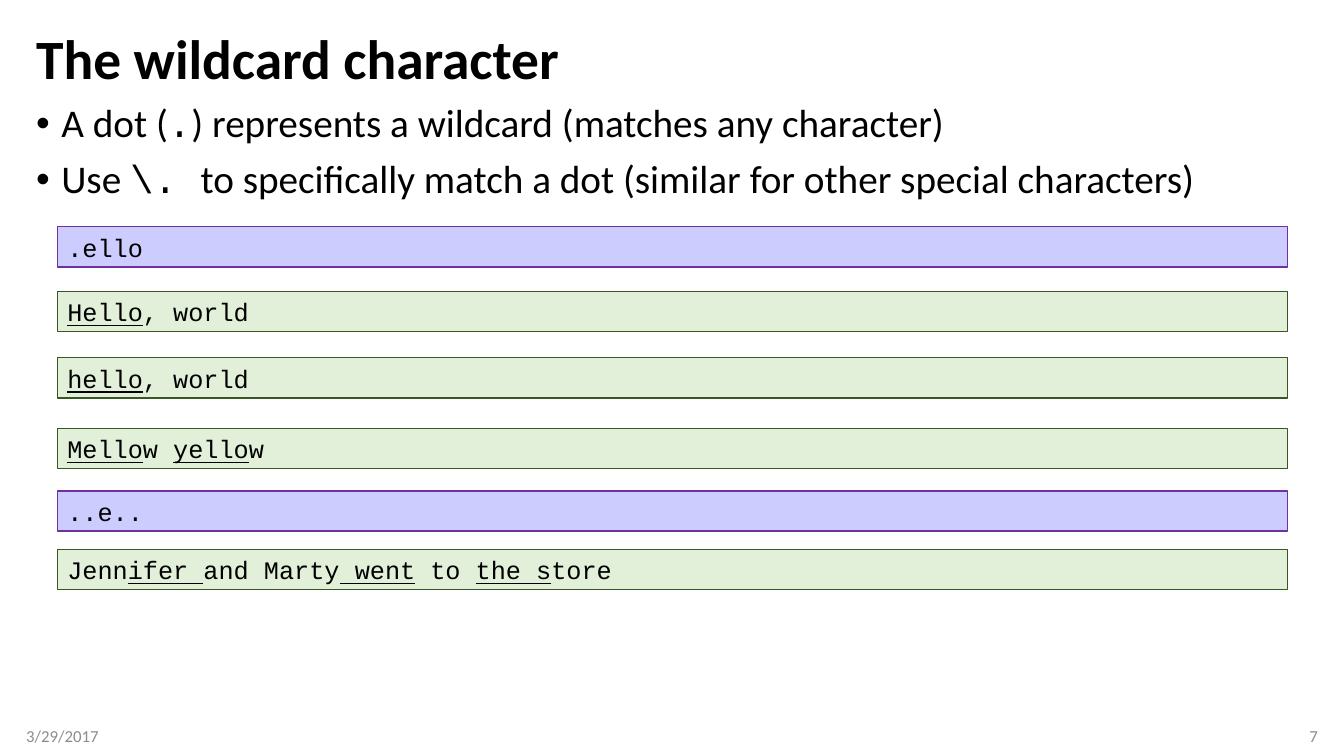
from pptx import Presentation
from pptx.dml.color import RGBColor as RGB
from pptx.enum.shapes import MSO_SHAPE as Shape
from pptx.enum.text import MSO_ANCHOR as Anchor, PP_ALIGN as Align
from pptx.oxml.ns import qn
from pptx.util import Inches, Pt
from lxml.etree import SubElement as Sub

COLORS = {
    "ink": "000000",
    "gray": "8C8C8C",
    "regex": "CCCCFF",
    "regex edge": "7030A0",
    "match": "E2F0D9",
    "match edge": "385723",
}


class Deck:
    sans = "Calibri"
    mono = "Courier New"
    left = 0.26
    wide = 12.81

    def __init__(self):
        self.prs = Presentation()
        self.prs.slide_width = Inches(13.33)
        self.prs.slide_height = Inches(7.5)
        self.slide = self.prs.slides.add_slide(self.prs.slide_layouts[6])

    def color(self, name):
        return RGB.from_string(COLORS[name])

    def style(self, para, size, font, color="ink"):
        for run in para.runs:
            run.font.size = Pt(size)
            run.font.name = font
            run.font.color.rgb = self.color(color)

    def split(self, para, text):
        marked = []
        for i, part in enumerate(text.split("|")):
            if part:
                run = para.add_run()
                run.text = part
                if i % 2:
                    marked.append(run)
        return marked

    def box(self, x, y, w, h, anchor=Anchor.MIDDLE):
        box = self.slide.shapes.add_textbox(
            Inches(x), Inches(y), Inches(w), Inches(h))
        frame = box.text_frame
        frame.word_wrap = True
        frame.vertical_anchor = anchor
        return frame

    def title(self, text):
        frame = self.box(self.left, 0.25, self.wide, 0.72)
        frame.text = text
        para = frame.paragraphs[0]
        para.line_spacing = 0.9
        self.style(para, 39.6, self.sans)
        para.runs[0].font.bold = True

    def bullets(self, lines):
        frame = self.box(self.left, 0.98, self.wide, 0.37, Anchor.TOP)
        for i, line in enumerate(lines):
            para = frame.add_paragraph() if i else frame.paragraphs[0]
            para.line_spacing = 0.9
            para.space_before = Pt(10)
            props = para._p.get_or_add_pPr()
            props.set("marL", str(Inches(0.25)))
            props.set("indent", str(-Inches(0.25)))
            Sub(props, qn("a:buFont")).set("typeface", "Arial")
            Sub(props, qn("a:buChar")).set("char", "•")
            codes = self.split(para, line)
            self.style(para, 28, self.sans)
            for run in codes:
                run.font.name = self.mono

    def bar(self, kind, y, text):
        bar = self.slide.shapes.add_shape(
            Shape.RECTANGLE, Inches(0.57), Inches(y), Inches(12.2), Inches(0.4))
        bar.shadow.inherit = False
        bar.fill.solid()
        bar.fill.fore_color.rgb = self.color(kind)
        bar.line.color.rgb = self.color(kind + " edge")
        bar.line.width = Pt(1)
        frame = bar.text_frame
        frame.vertical_anchor = Anchor.MIDDLE
        para = frame.paragraphs[0]
        para.alignment = Align.LEFT
        hits = self.split(para, text)
        self.style(para, 18, self.mono)
        for run in hits:
            run.font.underline = True

    def footer(self, x, text, align):
        frame = self.box(x, 7.1, 3, 0.4)
        if align == Align.LEFT:
            frame.margin_left = 0
        else:
            frame.margin_right = 0
        frame.text = text
        para = frame.paragraphs[0]
        para.alignment = align
        self.style(para, 12, self.sans, "gray")


def main():
    deck = Deck()
    deck.title("The wildcard character")
    deck.bullets([
        "A dot (|.|) represents a wildcard (matches any character)",
        "Use |\\. |to specifically match a dot (similar for other special characters)",
    ])
    deck.footer(deck.left, "3/29/2017", Align.LEFT)
    deck.footer(deck.left + deck.wide - 3, "7", Align.RIGHT)
    for kind, y, text in [
        ("regex", 2.25, ".ello"),
        ("match", 2.89, "|Hello|, world"),
        ("match", 3.55, "|hello|, world"),
        ("match", 4.25, "|Mello|w |yello|w"),
        ("regex", 4.87, "..e.."),
        ("match", 5.45, "Jenn|ifer |and Marty| went| to |the s|tore"),
    ]:
        deck.bar(kind, y, text)
    deck.prs.save("out.pptx")


if __name__ == "__main__":
    main()
